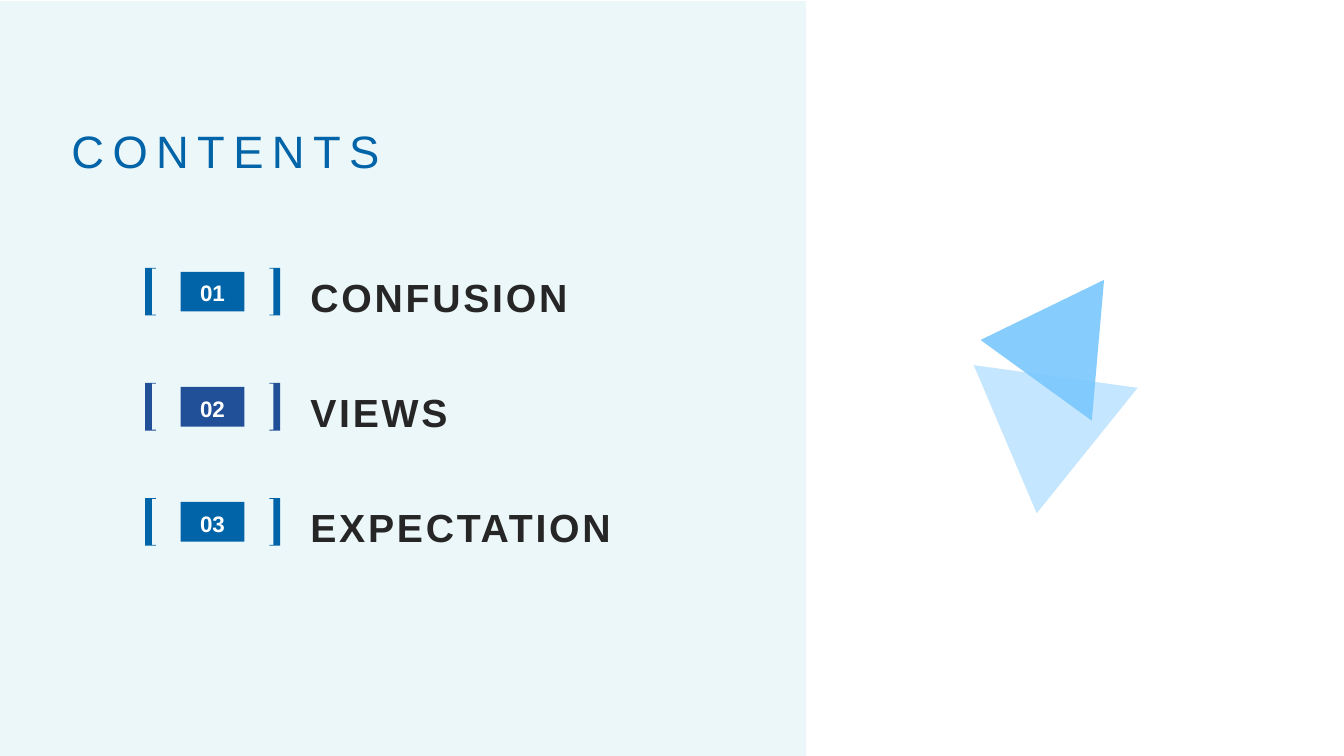
import pptx
import pptx.util
import pptx.dml.color
import pptx.enum.shapes
import pptx.enum.text
import pptx.oxml.ns
from dataclasses import dataclass

Cm = pptx.util.Cm
Shape = pptx.enum.shapes.MSO_SHAPE
Align = pptx.enum.text.PP_ALIGN
Anchor = pptx.enum.text.MSO_ANCHOR


@dataclass(frozen=True)
class Theme:
    font: str = "Arial"
    panel: str = "ECF7FA"
    blue: str = "0264A8"
    navy: str = "215099"
    sky: str = "79C7FD"
    ink: str = "262626"
    white: str = "FFFFFF"
    title: float = 32.4
    item: float = 28
    badge: float = 16


def color(code):
    return pptx.dml.color.RGBColor.from_string(code)


class Painter:
    def __init__(self, theme, slide):
        self.theme = theme
        self.slide = slide

    def paint(self, shape, fill):
        shape.shadow.inherit = False
        shape.fill.solid()
        shape.fill.fore_color.rgb = color(fill)
        shape.line.fill.background()

    def letter(self, shape, text, size, ink, bold=False, gap=0, lead=1.2,
               align=Align.LEFT, anchor=Anchor.MIDDLE, foot=0.13):
        frame = shape.text_frame
        para = frame.paragraphs[0]
        run = para.add_run()
        run.text = text
        run.font.color.rgb = color(ink)
        formats = (
            (frame, {"word_wrap": True, "vertical_anchor": anchor,
                     "auto_size": pptx.enum.text.MSO_AUTO_SIZE.NONE,
                     "margin_left": Cm(0.25), "margin_right": Cm(0.25),
                     "margin_top": Cm(0.13), "margin_bottom": Cm(foot)}),
            (para, {"alignment": align, "line_spacing": lead,
                    "space_before": pptx.util.Pt(0)}),
            (run.font, {"name": self.theme.font, "bold": bold,
                        "size": pptx.util.Pt(size)}),
        )
        for target, values in formats:
            for name, value in values.items():
                setattr(target, name, value)
        if gap:
            run.font._element.set("spc", str(gap * 100))

    def rect(self, box, fill):
        shape = self.slide.shapes.add_shape(Shape.RECTANGLE, *map(Cm, box))
        self.paint(shape, fill)
        return shape

    def label(self, box, text):
        shape = self.slide.shapes.add_textbox(*map(Cm, box))
        self.letter(shape, text, self.theme.item, self.theme.ink, bold=True, gap=2)

    def badge(self, box, text, fill):
        self.letter(self.rect(box, fill), text, self.theme.badge, self.theme.white,
                    bold=True, lead=1.1, align=Align.CENTER)

    def bracket(self, edge, top, side, fill):
        tall, arm, bar, lip = 1.2, 0.27, 0.17, 0.02
        outline = ((0, 0), (arm, 0), (arm, lip), (bar, lip), (bar, tall - lip),
                   (arm, tall - lip), (arm, tall), (0, tall))
        points = [(Cm(edge + side * x), Cm(top + y)) for x, y in outline]
        pen = self.slide.shapes.build_freeform(*points[0])
        pen.add_line_segments(points[1:], close=True)
        self.paint(pen.convert_to_shape(), fill)

    def emblem(self, parts):
        group = self.slide.shapes.add_group_shape()
        for box, turn, alpha in parts:
            shape = group.shapes.add_shape(Shape.ISOSCELES_TRIANGLE, *map(Cm, box))
            shape.rotation = turn
            self.paint(shape, self.theme.sky)
            tint = shape._element.spPr.find(".//" + pptx.oxml.ns.qn("a:srgbClr"))
            tint.append(pptx.oxml.parse_xml(
                f'<a:alpha {pptx.oxml.ns.nsdecls("a")} val="{alpha * 1000}"/>'))

    def title(self, box, text):
        shape = self.slide.shapes.title
        names = ("left", "top", "width", "height")
        for name, value in zip(names, box):
            setattr(shape, name, Cm(value))
        self.letter(shape, text, self.theme.title, self.theme.blue, gap=6,
                    anchor=Anchor.BOTTOM, foot=0)
        self.slide.shapes._spTree.append(shape._element)


def main():
    deck = pptx.Presentation()
    deck.slide_width, deck.slide_height = Cm(33.87), Cm(19.05)
    theme = Theme()
    art = Painter(theme, deck.slides.add_slide(deck.slide_layouts[5]))

    art.rect((0, 0.03, 20.32, 19.02), theme.panel)
    art.emblem((
        ((24.28, 9.47, 4.17, 3.48), 187.9, 44),
        ((24.41, 7.21, 3.56, 2.97), 275, 90),
    ))

    items = (("CONFUSION", theme.blue), ("VIEWS", theme.navy),
             ("EXPECTATION", theme.blue))
    for row, (text, fill) in enumerate(items):
        top = 6.75 + 2.9 * row
        art.label((7.57, top - 0.53, 9.09, 2.26), text)
        art.bracket(3.66, top, 1, fill)
        art.bracket(7.06, top, -1, fill)
        art.badge((4.55, top + 0.1, 1.61, 1), f"{row + 1:02}", fill)

    art.title((1.55, 1.57, 8.59, 2.9), "CONTENTS")
    deck.save("out.pptx")


if __name__ == "__main__":
    main()
